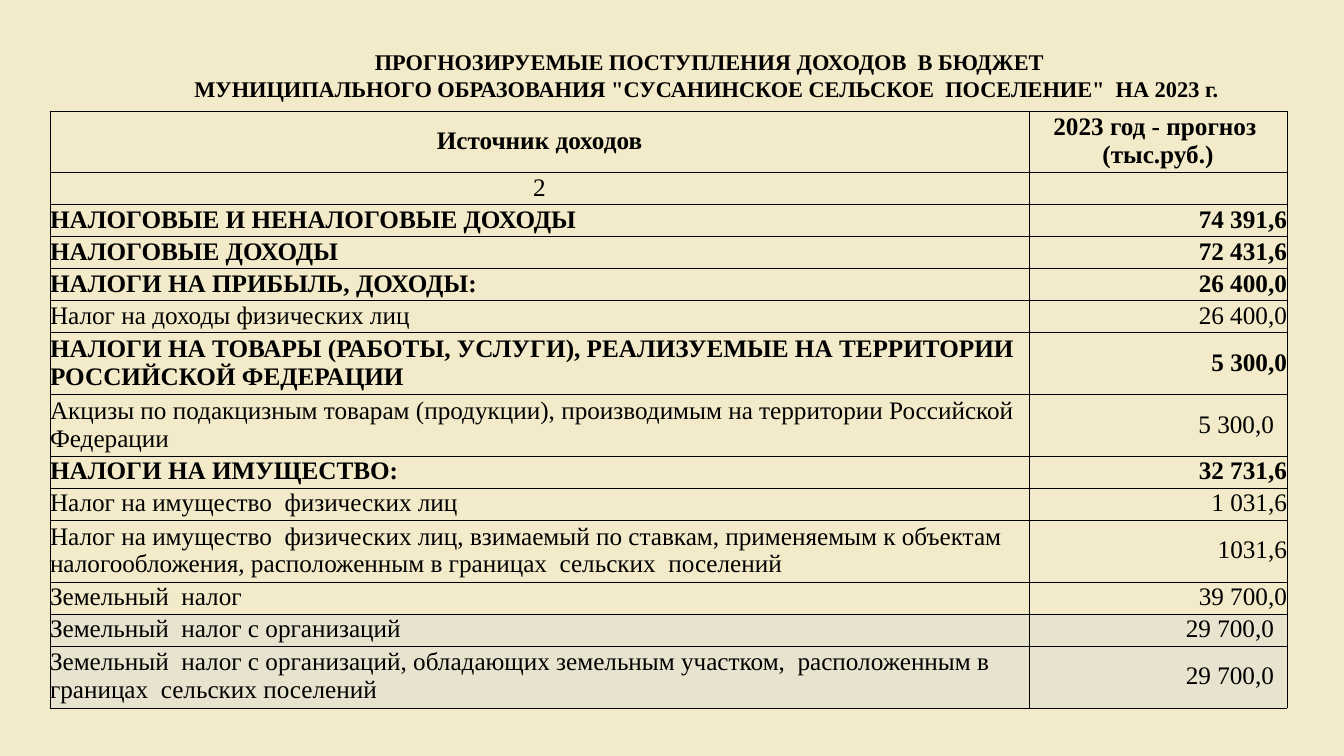
import pptx
import pptx.util
import pptx.dml.color
import pptx.enum.text
import pptx.oxml
import pptx.oxml.ns

SCALE = 914400 / 100.8  # EMU in one px
FACE = "Times New Roman"
INK, PAPER, SHADE = "000000", "F2EAC8", "E8E3CE"
ALIGN = pptx.enum.text.PP_ALIGN
ANCHOR = pptx.enum.text.MSO_ANCHOR

TITLE = [
    "ПРОГНОЗИРУЕМЫЕ ПОСТУПЛЕНИЯ ДОХОДОВ  В БЮДЖЕТ",
    'МУНИЦИПАЛЬНОГО ОБРАЗОВАНИЯ "СУСАНИНСКОЕ СЕЛЬСКОЕ  ПОСЕЛЕНИЕ"  НА 2023 г. ',
]
HEAD = ("Источник доходов", "2023 год - прогноз  (тыс.руб.)")

# Source, amount, row height, bold, right inset of the amount, fill
ROWS = [
    ("НАЛОГОВЫЕ И НЕНАЛОГОВЫЕ ДОХОДЫ", "74 391,6", 32, True, 0, None),
    ("НАЛОГОВЫЕ ДОХОДЫ", "72 431,6", 32, True, 0, None),
    ("НАЛОГИ НА ПРИБЫЛЬ, ДОХОДЫ:", "26 400,0", 32, True, 0, None),
    ("Налог на доходы физических лиц", "26 400,0", 32, False, 0, None),
    ("НАЛОГИ НА ТОВАРЫ (РАБОТЫ, УСЛУГИ), РЕАЛИЗУЕМЫЕ НА ТЕРРИТОРИИ "
     "РОССИЙСКОЙ ФЕДЕРАЦИИ", "5 300,0", 62, True, 0, None),
    ("Акцизы по подакцизным товарам (продукции), производимым на территории "
     "Российской Федерации", "5 300,0", 58, False, 13, None),
    ("НАЛОГИ НА ИМУЩЕСТВО:", "32 731,6", 32, True, 0, None),
    ("Налог на имущество  физических лиц", "1 031,6", 32, False, 0, None),
    ("Налог на имущество  физических лиц, взимаемый по ставкам, применяемым к "
     "объектам налогообложения, расположенным в границах  сельских  поселений",
     "1031,6", 62, False, 0, None),
    ("Земельный  налог", "39 700,0", 32, False, 0, None),
    ("Земельный  налог с организаций", "29 700,0", 32, False, 13, SHADE),
    ("Земельный  налог с организаций, обладающих земельным участком,  "
     "расположенным в границах  сельских поселений",
     "29 700,0", 62, False, 13, SHADE),
]


def px(count):
    return pptx.util.Emu(round(count * SCALE))


def color(code):
    return pptx.dml.color.RGBColor.from_string(code)


def apply(item, form):
    for name, value in form.items():
        setattr(item, name, value)


def write(para, text, size, bold, align):
    para.alignment = align
    run = para.add_run()
    run.text = text
    apply(run.font, {"name": FACE, "size": pptx.util.Pt(size), "bold": bold})
    run.font.color.rgb = color(INK)


def add_title(slide, lines):
    frame = slide.shapes.add_textbox(px(170), px(48), px(1079), px(54)).text_frame
    apply(frame, {"word_wrap": True, "vertical_anchor": ANCHOR.MIDDLE,
                  "margin_top": 0, "margin_bottom": 0})
    for order, line in enumerate(lines):
        para = frame.add_paragraph() if order else frame.paragraphs[0]
        write(para, line, 16, True, ALIGN.CENTER)


def add_edges(cell):
    props = cell._tc.get_or_add_tcPr()
    for side in ("lnL", "lnR", "lnT", "lnB"):
        props.append(pptx.oxml.parse_xml(
            f'<a:{side} {pptx.oxml.ns.nsdecls("a")} w="{pptx.util.Pt(0.5)}">'
            f'<a:solidFill><a:srgbClr val="{INK}"/></a:solidFill></a:{side}>'))


def fill_cell(cell, text, bold, align, inset=0, fill=None):
    apply(cell, {"margin_left": 0, "margin_right": px(inset), "margin_top": 0,
                 "margin_bottom": px(1), "vertical_anchor": ANCHOR.MIDDLE})
    add_edges(cell)
    if fill:
        cell.fill.solid()
        cell.fill.fore_color.rgb = color(fill)
    else:
        cell.fill.background()
    if text:
        write(cell.text_frame.paragraphs[0], text, 18, bold, align)


def add_grid(slide):
    highs = [57, 32] + [row[2] for row in ROWS]
    wides = [979, 258]
    table = slide.shapes.add_table(len(highs), len(wides), px(50), px(111),
                                   px(sum(wides)), px(sum(highs))).table
    apply(table, {"first_row": False, "horz_banding": False})
    for column, wide in zip(table.columns, wides):
        column.width = px(wide)
    for row, high in zip(table.rows, highs):
        row.height = px(high)

    # Heading and column number
    for col, text in enumerate(HEAD):
        fill_cell(table.cell(0, col), text, True, ALIGN.CENTER)
    for col, text in enumerate(("2", "")):
        fill_cell(table.cell(1, col), text, False, ALIGN.CENTER)

    # Sources and amounts
    for line, (source, amount, _, bold, inset, fill) in enumerate(ROWS, 2):
        fill_cell(table.cell(line, 0), source, bold, ALIGN.LEFT, 0, fill)
        fill_cell(table.cell(line, 1), amount, bold, ALIGN.RIGHT, inset, fill)


def main():
    deck = pptx.Presentation()
    apply(deck, {"slide_width": px(1344), "slide_height": px(756)})
    slide = deck.slides.add_slide(deck.slide_layouts[6])
    slide.background.fill.solid()
    slide.background.fill.fore_color.rgb = color(PAPER)
    add_title(slide, TITLE)
    add_grid(slide)
    deck.save("out.pptx")


if __name__ == "__main__":
    main()
